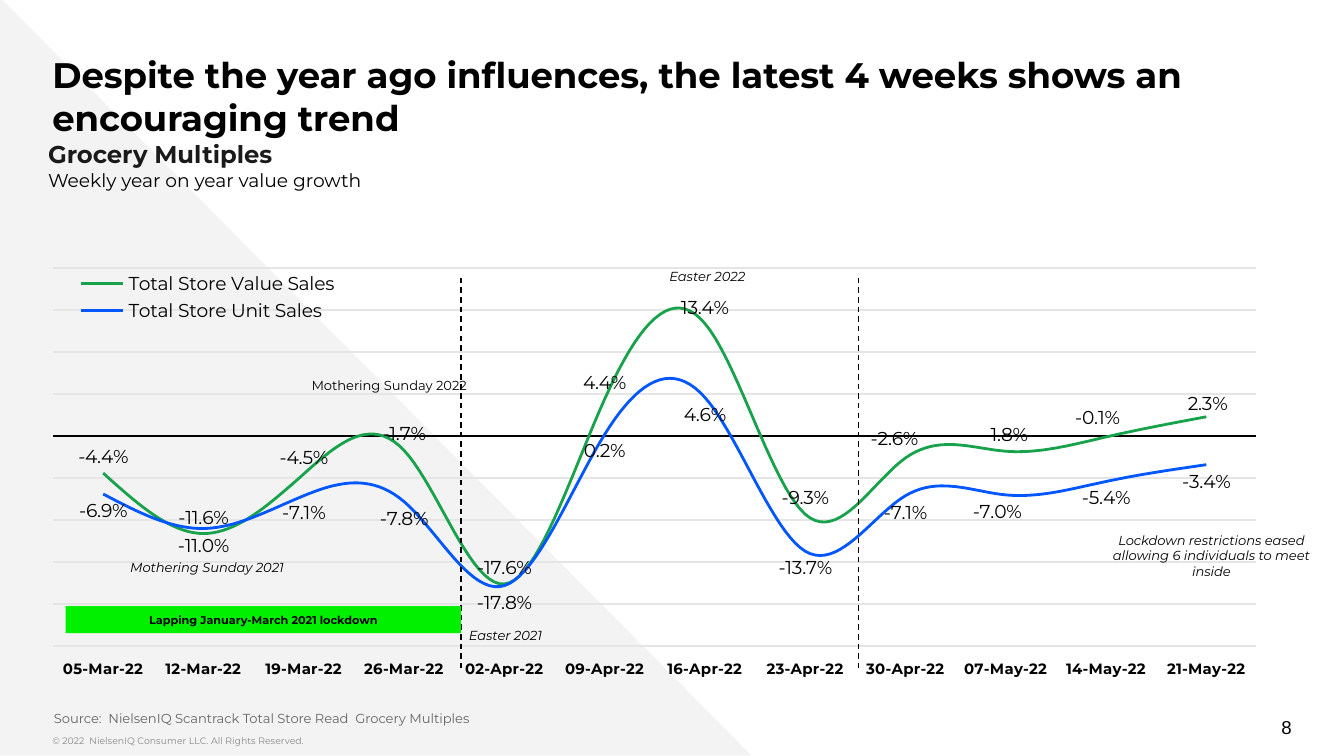
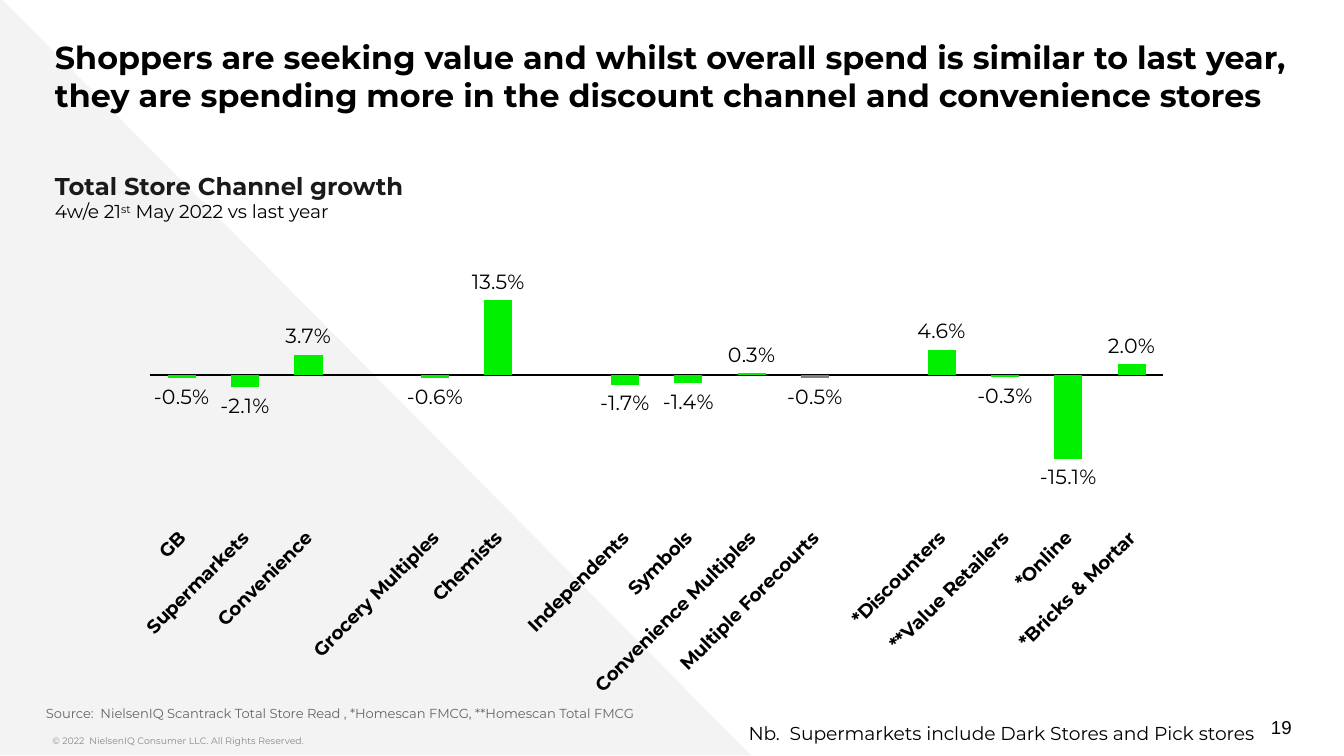
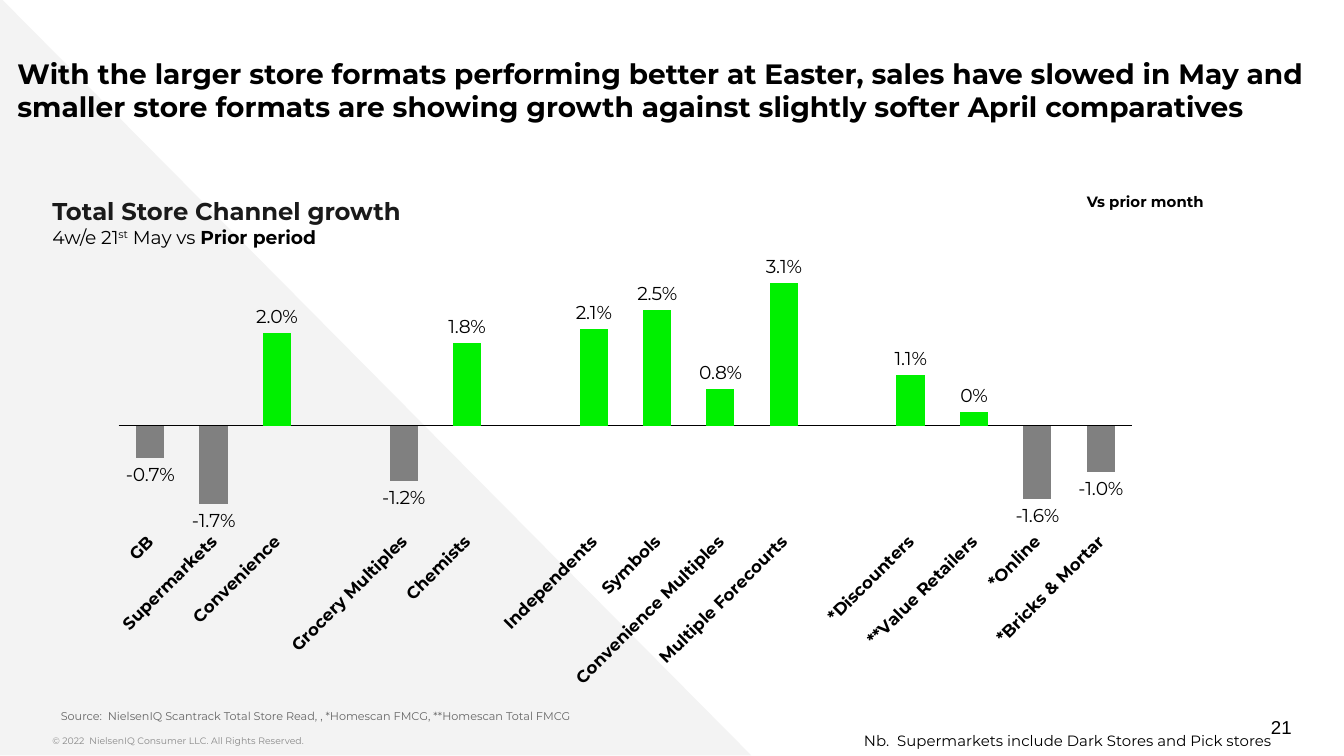
from dataclasses import dataclass

from lxml.etree import SubElement
from pptx import Presentation
from pptx.chart.data import CategoryChartData
from pptx.dml.color import RGBColor
from pptx.enum.chart import XL_CHART_TYPE, XL_LABEL_POSITION, XL_LEGEND_POSITION, XL_TICK_LABEL_POSITION, XL_TICK_MARK
from pptx.enum.dml import MSO_LINE
from pptx.enum.shapes import MSO_CONNECTOR, MSO_SHAPE
from pptx.enum.text import MSO_ANCHOR, PP_ALIGN
from pptx.oxml import parse_xml
from pptx.oxml.ns import nsdecls, qn
from pptx.util import Cm, Pt

COLORS = {
    "black": "000000", "heading": "1A1A1A", "source": "666666", "copyright": "888888",
    "triangle": "F3F3F3", "grid": "E5E5E5", "bright": "00F000", "grey": "808080",
    "value": "17A24B", "unit": "0056FF",
}
FONT = "Montserrat"
CHANNELS = [
    "GB", "Supermarkets", "Convenience", "", "Grocery Multiples", "Chemists", "",
    "Independents", "Symbols", "Convenience Multiples", "Multiple Forecourts", "",
    "*Discounters", "**Value Retailers", "*Online", "*Bricks & Mortar",
]
WEEKS = [
    "05-Mar-22", "12-Mar-22", "19-Mar-22", "26-Mar-22", "02-Apr-22", "09-Apr-22",
    "16-Apr-22", "23-Apr-22", "30-Apr-22", "07-May-22", "14-May-22", "21-May-22",
]
VALUE_SALES = [-0.044, -0.116, -0.045, -0.017, -0.176, 0.044, 0.134, -0.093, -0.026, -0.018, -0.001, 0.023]
UNIT_SALES = [-0.069, -0.11, -0.071, -0.078, -0.178, 0.002, 0.046, -0.137, -0.071, -0.07, -0.054, -0.034]
YEAR_GROWTH = [-0.005, -0.021, 0.037, None, -0.006, 0.135, None, -0.017, -0.014, 0.003, -0.005,
               None, 0.046, -0.003, -0.151, 0.02]
PERIOD_GROWTH = [-0.007, -0.017, 0.02, None, -0.012, 0.018, None, 0.021, 0.025, 0.008, 0.031,
                 None, 0.011, 0.003, -0.016, -0.01]


@dataclass
class Box:
    """A rectangle on the slide, in centimetres."""
    left: float
    top: float
    width: float
    height: float

    def area(self, left, top, width, height):
        return Box(self.left + left, self.top + top, width, height)

    def lengths(self):
        return Cm(self.left), Cm(self.top), Cm(self.width), Cm(self.height)


PAGE = Box(0, 0, 25.4, 14.29)


def color(name):
    return RGBColor.from_string(COLORS[name])


def style_font(font, size, color_name="black", bold=False, italic=False, name=FONT):
    font.name, font.size, font.bold, font.italic = name, Pt(size), bold, italic
    font.color.rgb = color(color_name)


def add_text(slide, box, lines, size, color_name="black", align=PP_ALIGN.LEFT,
             margins=(0.25, 0.13), wrap=True, **font_style):
    frame = slide.shapes.add_textbox(*box.lengths()).text_frame
    frame.word_wrap = wrap
    frame.margin_left = frame.margin_right = Cm(margins[0])
    frame.margin_top = frame.margin_bottom = Cm(margins[1])
    frame.text = lines
    for paragraph in frame.paragraphs:
        paragraph.alignment = align
        style_font(paragraph.font, size, color_name, **font_style)
    return frame


def add_plain_shape(slide, kind, box, fill):
    shape = slide.shapes.add_shape(kind, *box.lengths())
    shape.shadow.inherit = False
    shape.fill.solid()
    shape.fill.fore_color.rgb = color(fill)
    shape.line.fill.background()
    return shape


def add_frame(presentation, box, number):
    """Add a slide with the background triangle, copyright line and page number."""
    slide = presentation.slides.add_slide(presentation.slide_layouts[6])
    add_plain_shape(slide, MSO_SHAPE.RIGHT_TRIANGLE, box.area(0, -0.05, 14.2, 14.33), "triangle")
    add_text(slide, box.area(0.99, 13.79, 14.07, 0.51),
             "© 2022  NielsenIQ Consumer LLC. All Rights Reserved.", 5, "copyright", margins=(0, 0.13))
    page_number = add_text(slide, box.area(18.69, 13.36, 5.72, 0.76), str(number), 10,
                           align=PP_ALIGN.RIGHT, margins=(0, 0.13), name="Arial")
    page_number.vertical_anchor = MSO_ANCHOR.MIDDLE
    return slide


def add_title(slide, box, title, size):
    add_text(slide, box, title, size, bold=True, margins=(0, 0.25))


def add_source(slide, box, source, size):
    frame = add_text(slide, box, source, size, "source", margins=(0, 0.25))
    frame.margin_left = Cm(0.41)


def add_heading(slide, box, heading, details):
    """Add a bold heading over a line of (text, bold, baseline) runs."""
    frame = add_text(slide, box, "", 10, margins=(0, 0.13))
    paragraph = frame.paragraphs[0]
    run = paragraph.add_run()
    run.text = heading
    style_font(run.font, 13, "heading", bold=True)
    paragraph.add_line_break()
    for text, bold, baseline in details:
        run = paragraph.add_run()
        run.text = text
        style_font(run.font, 10, bold=bold)
        if baseline:
            run.font._element.set("baseline", str(baseline))


def add_note(slide, box, text, size=7, **style):
    add_text(slide, box, text, size, wrap=False, **style)


def set_layout(parent, index, target=None, **fractions):
    """Fix the place of a plot area or legend as fractions of the chart."""
    for old in parent.findall(qn("c:layout")):
        parent.remove(old)
    layout = parse_xml(f"<c:layout {nsdecls('c')}><c:manualLayout/></c:layout>")
    settings = {"layoutTarget": target} if target else {}
    settings.update(xMode="edge", yMode="edge", **fractions)
    for tag, value in settings.items():
        SubElement(layout[0], qn(f"c:{tag}")).set("val", str(value))
    parent.insert(index, layout)


def adjust_label(series, index, position, xml):
    """Give one point its own label, with xml placed right after its index."""
    series.points[index].data_label.position = position
    label = series.data_labels._element.xpath(f'c:dLbl[c:idx/@val="{index}"]')[0]
    label.insert(1, parse_xml(xml))


def shift_label(series, index, position, x, y):
    adjust_label(series, index, position,
                 f'<c:layout {nsdecls("c")}><c:manualLayout><c:x val="{x}"/><c:y val="{y}"/>'
                 '</c:manualLayout></c:layout>')


def show_labels(series, position, size):
    labels = series.data_labels
    labels.show_value = True
    labels.number_format, labels.number_format_is_linked = "0.0%", False
    labels.position = position
    style_font(labels.font, size)


def add_growth_chart(slide, box, kind, categories, series, scale, plot, axis_size):
    data = CategoryChartData(number_format="0.0%")
    data.categories = categories
    for name, values in series:
        data.add_series(name, values)
    chart = slide.shapes.add_chart(kind, *box.lengths(), data).chart
    chart.has_title = chart.has_legend = False
    style_font(chart.font, 10)
    chart.plots[0].vary_by_categories = False
    category_axis, value_axis = chart.category_axis, chart.value_axis
    category_axis.tick_label_position = XL_TICK_LABEL_POSITION.LOW
    category_axis.major_tick_mark = category_axis.minor_tick_mark = XL_TICK_MARK.NONE
    category_axis.format.line.color.rgb = color("black")
    category_axis.format.line.width = Pt(0.75)
    style_font(category_axis.tick_labels.font, axis_size, bold=True)
    value_axis.minimum_scale, value_axis.maximum_scale = scale
    value_axis.has_major_gridlines = False
    value_axis.visible = False
    x, y, width, height = plot
    set_layout(chart._chartSpace.chart.plotArea, 0, "inner", x=x, y=y, w=width, h=height)
    return chart


def add_weekly_chart(slide, box):
    chart = add_growth_chart(
        slide, box, XL_CHART_TYPE.LINE, WEEKS,
        [("Total Store Value Sales", VALUE_SALES), ("Total Store Unit Sales", UNIT_SALES)],
        (-0.25, 0.2), (0, 0.061, 0.973, 0.767), 8)
    chart.value_axis.major_unit = 0.05
    chart.value_axis.has_major_gridlines = True
    grid = chart.value_axis.major_gridlines.format.line
    grid.color.rgb, grid.width = color("grid"), Pt(0.75)
    chart.has_legend = True
    chart.legend.position = XL_LEGEND_POSITION.LEFT
    chart.legend.include_in_layout = False
    style_font(chart.legend.font, 10)
    set_layout(chart.legend._element, 1, x=0.01, y=0.06, w=0.23, h=0.12)

    above, below = XL_LABEL_POSITION.ABOVE, XL_LABEL_POSITION.BELOW
    value_sales, unit_sales = chart.plots[0].series
    for series, line_color, position in ((value_sales, "value", above), (unit_sales, "unit", below)):
        series.smooth = True
        series.format.line.color.rgb = color(line_color)
        series.format.line.width = Pt(1.5)
        show_labels(series, position, 10)
    for index, x, y in ((8, -0.009, -0.006), (10, -0.007, -0.006), (11, 0.001, 0.007)):
        shift_label(value_sales, index, above, x, y)
    shift_label(unit_sales, 9, below, -0.007, 0)


def add_channel_chart(slide, box, values, scale, plot, axis_size, label_size, grey_points):
    chart = add_growth_chart(slide, box, XL_CHART_TYPE.COLUMN_CLUSTERED, CHANNELS,
                             [("Series 1", values)], scale, plot, axis_size)
    chart.category_axis._element.xpath("c:txPr/a:bodyPr")[0].set("rot", "-2700000")
    chart.plots[0].gap_width = 125
    series = chart.plots[0].series[0]
    series.invert_if_negative = False
    series.format.fill.solid()
    series.format.fill.fore_color.rgb = color("bright")
    for index in grey_points:
        fill = series.points[index].format.fill
        fill.solid()
        fill.fore_color.rgb = color("grey")
    show_labels(series, XL_LABEL_POSITION.OUTSIDE_END, label_size)
    return series


def add_period_divider(slide, box, x):
    line = slide.shapes.add_connector(MSO_CONNECTOR.STRAIGHT, Cm(box.left + x), Cm(box.top + 0.75),
                                      Cm(box.left + x), Cm(box.top + 8.2))
    line.line.color.rgb = color("black")
    line.line.width = Pt(0.75)
    line.line.dash_style = MSO_LINE.DASH
    SubElement(line._element.spPr, qn("a:effectLst"))


def add_weekly_events(slide, box):
    """Mark holidays and lockdown periods over the weekly chart."""
    for x in (7.72, 15.24):
        add_period_divider(slide, box, x)
    band = add_plain_shape(slide, MSO_SHAPE.RECTANGLE, box.area(0.25, 6.96, 7.47, 0.51), "bright")
    band.text_frame.text = "Lapping January-March 2021 lockdown"
    band.text_frame.vertical_anchor = MSO_ANCHOR.MIDDLE
    paragraph = band.text_frame.paragraphs[0]
    paragraph.alignment = PP_ALIGN.CENTER
    style_font(paragraph.font, 6, bold=True)
    for left, top, width, text, italic in (
            (1.22, 5.94, 3.45, "Mothering Sunday 2021", True),
            (4.65, 2.51, 3.5, "Mothering Sunday 2022", False),
            (7.62, 7.23, 1.93, "Easter 2021", True),
            (11.41, 0.45, 1.98, "Easter 2022", True)):
        add_note(slide, box.area(left, top, width, 0.56), text, italic=italic)
    add_text(slide, box.area(19.76, 5.43, 4.29, 1.14),
             "Lockdown restrictions eased\nallowing 6 individuals to meet inside", 7,
             align=PP_ALIGN.CENTER, italic=True)


def add_weekly_slide(presentation, box):
    slide = add_frame(presentation, box, 8)
    add_heading(slide, box.area(0.91, 2.51, 10.57, 1.37), "Grocery Multiples",
                [("Weekly year on year value growth", False, 0)])
    add_title(slide, box.area(0.99, 0.76, 24.05, 1.09),
              "Despite the year ago influences, the latest 4 weeks shows an encouraging trend", 19)
    add_source(slide, box.area(0.61, 13.28, 22.66, 0.51),
               "Source:  NielsenIQ Scantrack Total Store Read  Grocery Multiples", 7)
    chart_box = box.area(0.99, 4.5, 23.39, 9.32)
    add_weekly_chart(slide, chart_box)
    add_weekly_events(slide, chart_box)


def add_channel_heading(slide, box, *ending):
    add_heading(slide, box, "Total Store Channel growth",
                [("4w/e 21", False, 0), ("st", False, 30000), *ending])


def add_store_note(slide, box, size):
    add_note(slide, box, "Nb.  Supermarkets include Dark Stores and Pick stores", size,
             align=PP_ALIGN.RIGHT)


def add_year_slide(presentation, box):
    slide = add_frame(presentation, box, 19)
    add_channel_heading(slide, box.area(1.04, 3.1, 10.57, 1.24), (" May 2022 vs last year", False, 0))
    add_title(slide, box.area(1.04, 0.46, 24.21, 1.04),
              "Shoppers are seeking value and whilst overall spend is similar to last year, "
              "they are spending more in the discount channel and convenience stores", 17)
    add_source(slide, box.area(0.46, 13.18, 22.66, 0.51),
               "Source:  NielsenIQ Scantrack Total Store Read , *Homescan FMCG, **Homescan Total FMCG", 7)
    add_channel_chart(slide, box.area(2.06, 4.37, 19.94, 8.94), YEAR_GROWTH, (-0.25, 0.25),
                      (0.039, 0.012, 0.961, 0.585), 10, 11, [10])
    add_store_note(slide, box.area(13.64, 13.51, 10.31, 0.69), 10)


def add_period_slide(presentation, box):
    slide = add_frame(presentation, box, 21)
    add_channel_heading(slide, box.area(0.99, 3.58, 10.57, 1.24),
                        (" May vs ", False, 0), ("Prior period", True, 0))
    add_title(slide, box.area(0.33, 0.81, 25.07, 1.65),
              "With the larger store formats performing better at Easter, sales have slowed in May and "
              "smaller store formats are showing growth against slightly softer April comparatives", 15)
    add_source(slide, box.area(0.74, 13.28, 22.66, 0.51),
               "Source:  NielsenIQ Scantrack Total Store Read, , *Homescan FMCG, **Homescan Total FMCG", 6)
    falling = [index for index, value in enumerate(PERIOD_GROWTH) if value is not None and value < 0]
    series = add_channel_chart(slide, box.area(2.16, 4.14, 19.94, 8.94), PERIOD_GROWTH, (-0.02, 0.04),
                               (0.004, 0.047, 0.961, 0.585), 9, 10, falling)
    adjust_label(series, CHANNELS.index("**Value Retailers"), XL_LABEL_POSITION.OUTSIDE_END,
                 f'<c:numFmt {nsdecls("c")} formatCode="0%" sourceLinked="0"/>')
    add_store_note(slide, box.area(15.98, 13.69, 8.31, 0.61), 8)
    add_note(slide, box.area(20.29, 3.51, 2.77, 0.61), "Vs prior month", 8, bold=True)


def main():
    presentation = Presentation()
    presentation.slide_width, presentation.slide_height = Cm(PAGE.width), Cm(PAGE.height)
    for add_slide in (add_weekly_slide, add_year_slide, add_period_slide):
        add_slide(presentation, PAGE)
    presentation.save("out.pptx")


if __name__ == "__main__":
    main()
